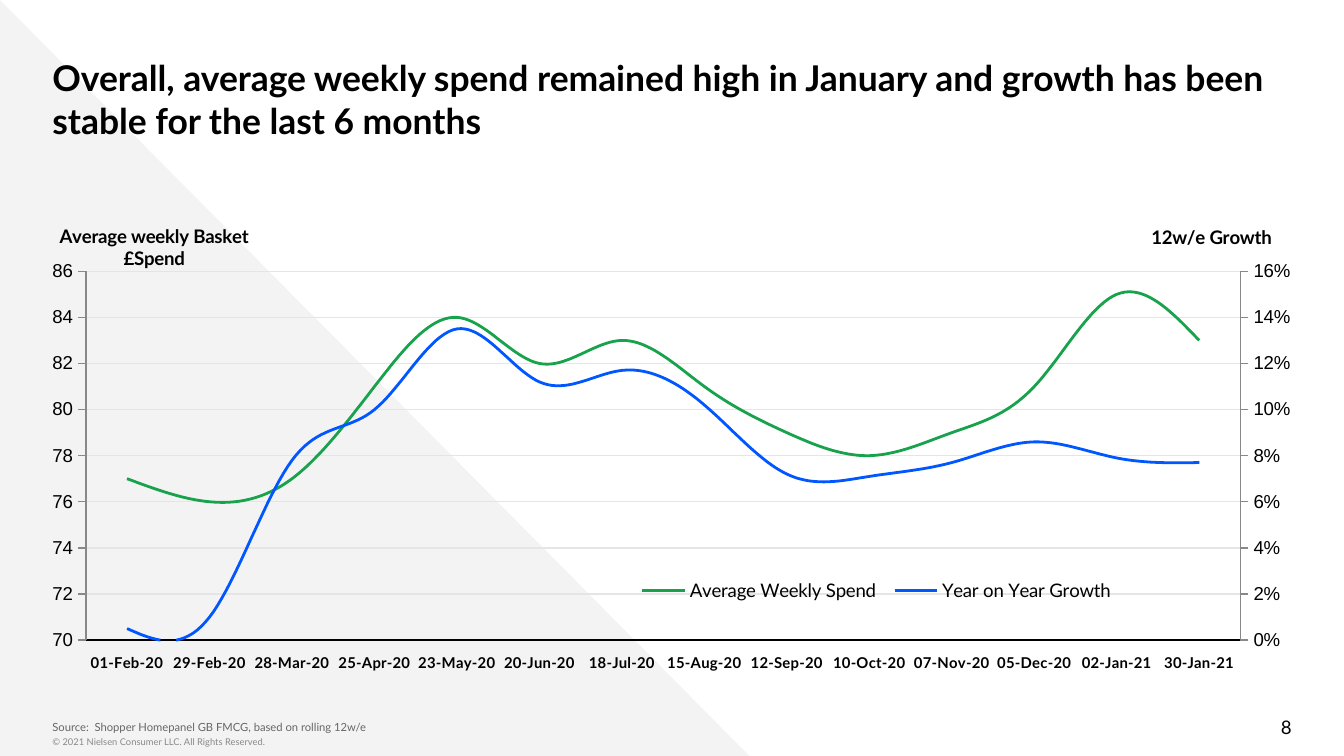
from copy import deepcopy

from lxml import etree
from pptx import Presentation, util as u
from pptx.chart.data import CategoryChartData
from pptx.dml.color import RGBColor
from pptx.enum import chart as ch, shapes, text
from pptx.oxml.ns import qn

BLACK = RGBColor(0, 0, 0)
DARK_GREY = RGBColor(0x66, 0x66, 0x66)
GREY = RGBColor(0x88, 0x88, 0x88)
GRID = RGBColor(0xE5, 0xE5, 0xE5)
PALE = RGBColor(0xF3, 0xF3, 0xF3)
GREEN = RGBColor(0x17, 0xA2, 0x4B)
BLUE = RGBColor(0x00, 0x56, 0xFF)

# text, (left, top, width, height), vertical inset, size, colour, bold, anchor, alignment
TOP, MIDDLE, BOTTOM = (text.MSO_ANCHOR.TOP, text.MSO_ANCHOR.MIDDLE, text.MSO_ANCHOR.BOTTOM)
LEFT, RIGHT = text.PP_ALIGN.LEFT, text.PP_ALIGN.RIGHT
TEXTS = [
    ("© 2021 Nielsen Consumer LLC. All Rights Reserved.",
     (28.1, 391, 398.9, 14.4), 3.6, 5, GREY, False, TOP, LEFT),
    ("8", (529.9, 378.7, 162, 21.6), 3.6, 10, BLACK, False, MIDDLE, RIGHT),
    ("Overall, average weekly spend remained high in January and growth has been "
     "stable for the last 6 months",
     (28.1, 23, 663.8, 31), 7.2, 19, BLACK, True, TOP, LEFT),
    ("Source:  Shopper Homepanel GB FMCG, based on rolling 12w/e",
     (28.1, 382.3, 642.2, 14.4), 7.2, 6, DARK_GREY, False, BOTTOM, LEFT),
]

DATES = ["01-Feb-20", "29-Feb-20", "28-Mar-20", "25-Apr-20", "23-May-20", "20-Jun-20",
         "18-Jul-20", "15-Aug-20", "12-Sep-20", "10-Oct-20", "07-Nov-20", "05-Dec-20",
         "02-Jan-21", "30-Jan-21"]
SERIES = [
    ("Average Weekly Spend", GREEN,
     [77, 76, 77, 81, 84, 82, 83, 81, 79, 78, 79, 81, 85, 83]),
    ("Year on Year Growth", BLUE,
     [0.005, 0.01, 0.078, 0.1, 0.135, 0.112, 0.117, 0.102, 0.072, 0.071, 0.077,
      0.086, 0.079, 0.077]),
]
LEFT_TITLE, RIGHT_TITLE = "Average weekly Basket £Spend", "12w/e Growth"


def set_font(font, size, name="Lato", color=BLACK, bold=False):
    font.size, font.name, font.bold = u.Pt(size), name, bold
    font.color.rgb = color


def set_line(line, color, width=0.75):
    line.color.rgb = color
    line.width = u.Pt(width)


def add_text(slide, words, place, inset, size, color, bold, anchor, alignment):
    frame = slide.shapes.add_textbox(*map(u.Pt, place)).text_frame
    frame.word_wrap = True
    frame.vertical_anchor = anchor
    frame.margin_left = frame.margin_right = 0
    frame.margin_top = frame.margin_bottom = u.Pt(inset)
    paragraph = frame.paragraphs[0]
    paragraph.alignment = alignment
    run = paragraph.add_run()
    run.text = words
    set_font(run.font, size, color=color, bold=bold)


def set_layout(element, index, inner=False, **fractions):
    """Place a chart part by fractions of the chart's size."""
    for old in element.findall(qn("c:layout")):
        element.remove(old)
    layout = etree.Element(qn("c:layout"))
    manual = etree.SubElement(layout, qn("c:manualLayout"))
    settings = [("layoutTarget", "inner")] if inner else []
    settings += [("xMode", "edge"), ("yMode", "edge")]
    settings += [(key, str(value)) for key, value in fractions.items()]
    for tag, value in settings:
        etree.SubElement(manual, qn("c:" + tag)).set("val", value)
    element.insert(index, layout)


def set_value(element, tag, value):
    element.find(".//" + qn(tag)).set("val", value)


def add_right_axis(chart):
    """Move the second series to its own plot with a value axis on the right."""
    plot_area = chart.plots[0]._element.getparent()
    left_plot = plot_area.find(qn("c:lineChart"))
    right_plot = deepcopy(left_plot)
    left_plot.remove(left_plot.findall(qn("c:ser"))[1])
    right_plot.remove(right_plot.findall(qn("c:ser"))[0])
    left_plot.addnext(right_plot)
    for axis_id, number in zip(right_plot.findall(qn("c:axId")), ("501", "502")):
        axis_id.set("val", number)

    categories = deepcopy(plot_area.find(qn("c:catAx")))
    values = deepcopy(plot_area.find(qn("c:valAx")))
    for axis, own, other in ((categories, "501", "502"), (values, "502", "501")):
        set_value(axis, "c:axId", own)
        set_value(axis, "c:crossAx", other)
    set_value(categories, "c:delete", "1")
    values.remove(values.find(qn("c:majorGridlines")))
    for tag, value in (("c:axPos", "r"), ("c:crosses", "max"), ("c:min", "0"),
                       ("c:max", "0.16"), ("c:majorUnit", "0.02")):
        set_value(values, tag, value)
    values.find(qn("c:numFmt")).set("formatCode", "0%")
    title = values.find(qn("c:title"))
    title.find(".//" + qn("a:t")).text = RIGHT_TITLE
    set_layout(title, 1, x=0.888, y=0.036)
    plot_area.find(qn("c:valAx")).addnext(values)
    values.addprevious(categories)


def add_spend_chart(slide):
    data = CategoryChartData()
    data.categories = DATES
    for name, _, values in SERIES:
        data.add_series(name, values)
    chart = slide.shapes.add_chart(ch.XL_CHART_TYPE.LINE, u.Pt(28.1), u.Pt(108.7),
                                   u.Pt(663.1), u.Pt(265.7), data).chart
    chart.has_title = False
    set_font(chart.font, 10, "Arial")
    plot = chart.plots[0]
    plot.vary_by_categories = False
    for series, (_, color, _) in zip(plot.series, SERIES):
        series.smooth = True
        set_line(series.format.line, color, 1.5)

    dates = chart.category_axis
    dates.tick_label_position = ch.XL_TICK_LABEL_POSITION.LOW
    dates.major_tick_mark = ch.XL_TICK_MARK.NONE
    set_font(dates.tick_labels.font, 8, bold=True)
    set_line(dates.format.line, BLACK)

    spend = chart.value_axis
    spend.minimum_scale, spend.maximum_scale, spend.major_unit = 70, 86, 2
    spend.major_tick_mark = ch.XL_TICK_MARK.OUTSIDE
    spend.tick_labels.number_format = "0"
    spend.tick_labels.number_format_is_linked = False
    set_font(spend.tick_labels.font, 10, "Arial")
    set_line(spend.format.line, GREY)
    set_line(spend.major_gridlines.format.line, GRID)
    run = spend.axis_title.text_frame.paragraphs[0].add_run()
    run.text = LEFT_TITLE
    set_font(run.font, 10, bold=True)
    title = spend.axis_title._element
    body = title.find(".//" + qn("a:bodyPr"))
    body.set("rot", "0")
    body.set("vert", "horz")
    set_layout(title, 1, x=0.003, y=0.034)

    chart.has_legend = True
    chart.legend.position = ch.XL_LEGEND_POSITION.BOTTOM
    chart.legend.include_in_layout = False
    set_font(chart.legend.font, 10)
    set_layout(chart.legend._element, 1, x=0.468, y=0.752, w=0.4, h=0.06)
    set_layout(plot._element.getparent(), 0, inner=True, x=0.027, y=0.138, w=0.936, h=0.744)
    add_right_axis(chart)


def main():
    presentation = Presentation()
    presentation.slide_width, presentation.slide_height = u.Pt(720), u.Pt(405)
    slide = presentation.slides.add_slide(presentation.slide_layouts[6])
    triangle = slide.shapes.add_shape(shapes.MSO_SHAPE.RIGHT_TRIANGLE, 0, 0,
                                      u.Pt(402.5), u.Pt(406))
    triangle.shadow.inherit = False
    triangle.fill.solid()
    triangle.fill.fore_color.rgb = PALE
    triangle.line.fill.background()
    for item in TEXTS:
        add_text(slide, *item)
    add_spend_chart(slide)
    presentation.save("out.pptx")


if __name__ == "__main__":
    main()
